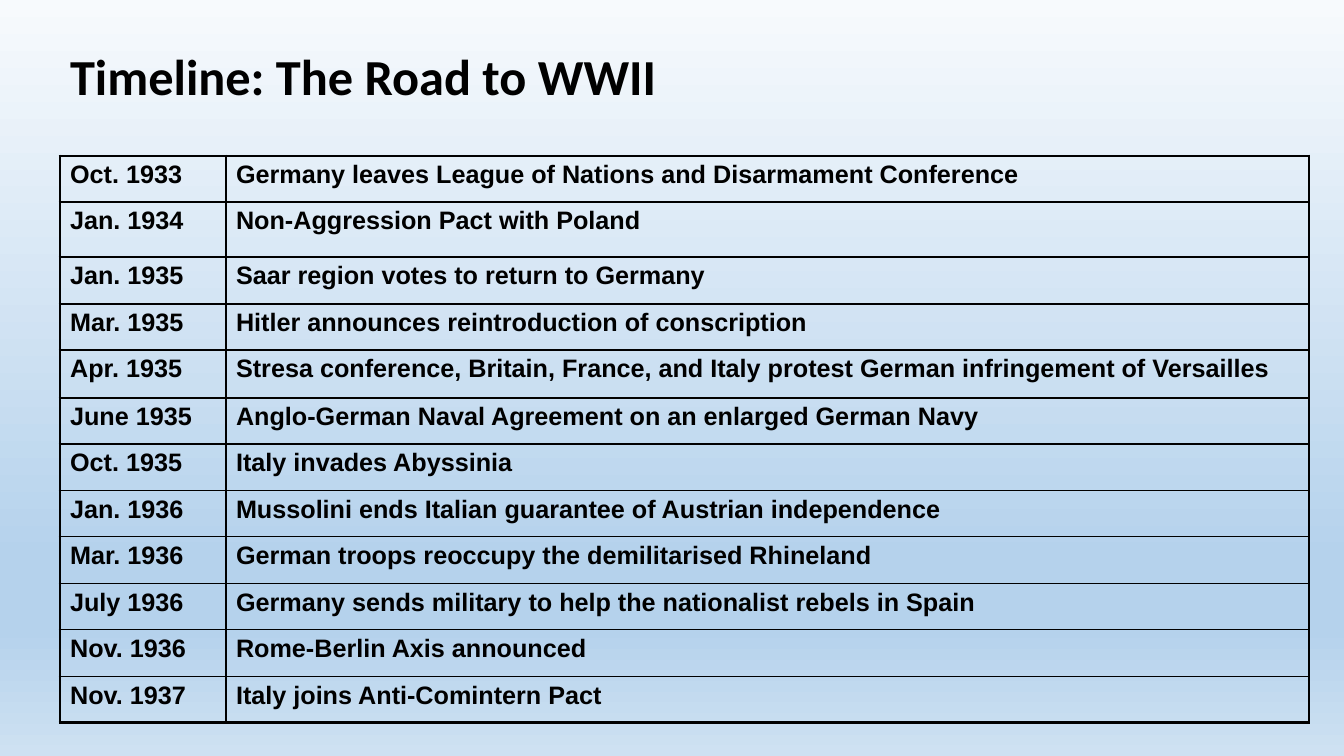
from itertools import pairwise

from lxml.etree import SubElement
from pptx import Presentation
from pptx.dml.color import RGBColor
from pptx.enum.text import MSO_ANCHOR, PP_ALIGN
from pptx.oxml import parse_xml
from pptx.oxml.ns import nsdecls, qn
from pptx.util import Pt

EMU_PER_PX = 914400 / 100.8
BLACK = RGBColor(0x00, 0x00, 0x00)
SKY_STOPS = [
    (0, RGBColor(0xF7, 0xFA, 0xFD)),
    (74, RGBColor(0xB5, 0xD2, 0xEC)),
    (83, RGBColor(0xB5, 0xD2, 0xEC)),
    (100, RGBColor(0xCE, 0xE1, 0xF2)),
]
OUTER_PT = 2.25
INNER_PT = 1
TABLE_LEFT = 60
COLUMN_WIDTHS = [166, 1083]
ROW_LINES = [156, 202, 257, 304, 350, 398, 444, 491, 537, 584, 630, 677, 723]
EVENTS = [
    ("Oct. 1933", "Germany leaves League of Nations and Disarmament Conference"),
    ("Jan. 1934", "Non-Aggression Pact with Poland"),
    ("Jan. 1935", "Saar region votes to return to Germany"),
    ("Mar. 1935", "Hitler announces reintroduction of conscription"),
    ("Apr. 1935", "Stresa conference, Britain, France, and Italy protest German infringement of Versailles"),
    ("June 1935", "Anglo-German Naval Agreement on an enlarged German Navy"),
    ("Oct. 1935", "Italy invades Abyssinia"),
    ("Jan. 1936", "Mussolini ends Italian guarantee of Austrian independence"),
    ("Mar. 1936", "German troops reoccupy the demilitarised Rhineland"),
    ("July 1936", "Germany sends military to help the nationalist rebels in Spain"),
    ("Nov. 1936", "Rome-Berlin Axis announced"),
    ("Nov. 1937", "Italy joins Anti-Comintern Pact"),
]


def px(length):
    return round(length * EMU_PER_PX)


def style_font(paragraph, name, size):
    font = paragraph.font
    font.name = name
    font.size = Pt(size)
    font.bold = True
    font.color.rgb = BLACK


def paint_background(slide):
    fill = slide.background.fill
    fill.gradient()
    fill.gradient_angle = 270
    stops = slide.element.find(".//" + qn("a:gsLst"))
    for stop in list(stops):
        stops.remove(stop)
    for percent, color in SKY_STOPS:
        stop = SubElement(stops, qn("a:gs"), pos=str(percent * 1000))
        SubElement(stop, qn("a:srgbClr"), val=str(color))


def add_title(slide, text):
    title = slide.shapes.title
    title.left, title.top, title.width, title.height = px(60), px(28), px(1225), px(103)
    frame = title.text_frame
    frame.text = text
    frame.word_wrap = True
    frame.vertical_anchor = MSO_ANCHOR.MIDDLE
    heading = frame.paragraphs[0]
    heading.alignment = PP_ALIGN.LEFT
    heading.line_spacing = 0.9
    style_font(heading, "Calibri", 36)


def set_borders(cell, outer_edges):
    properties = cell._tc.get_or_add_tcPr()
    for position, (edge, is_outer) in enumerate(outer_edges.items()):
        width = Pt(OUTER_PT if is_outer else INNER_PT)
        properties.insert(position, parse_xml(
            f'<a:{edge} {nsdecls("a")} w="{width}"><a:solidFill>'
            f'<a:srgbClr val="{BLACK}"/></a:solidFill></a:{edge}>'
        ))


def add_timeline(slide, events):
    last_row, last_column = len(events) - 1, len(COLUMN_WIDTHS) - 1
    timeline = slide.shapes.add_table(
        len(events), len(COLUMN_WIDTHS), px(TABLE_LEFT), px(ROW_LINES[0]),
        px(sum(COLUMN_WIDTHS)), px(ROW_LINES[-1] - ROW_LINES[0]),
    ).table
    timeline.first_row = False
    timeline.horz_banding = False
    for column, width in zip(timeline.columns, COLUMN_WIDTHS):
        column.width = px(width)
    for row, (top, bottom) in zip(timeline.rows, pairwise(ROW_LINES)):
        row.height = px(bottom - top)
    for r, event in enumerate(events):
        for c, text in enumerate(event):
            cell = timeline.cell(r, c)
            cell.text = text
            cell.fill.background()
            style_font(cell.text_frame.paragraphs[0], "Arial", 18)
            set_borders(cell, {
                "lnL": c == 0, "lnR": c == last_column,
                "lnT": r == 0, "lnB": r == last_row,
            })


def main():
    presentation = Presentation()
    presentation.slide_width = px(1344)
    presentation.slide_height = px(756)
    slide = presentation.slides.add_slide(presentation.slide_layouts[5])
    paint_background(slide)
    add_title(slide, "Timeline: The Road to WWII")
    add_timeline(slide, EVENTS)
    presentation.save("out.pptx")


if __name__ == "__main__":
    main()
